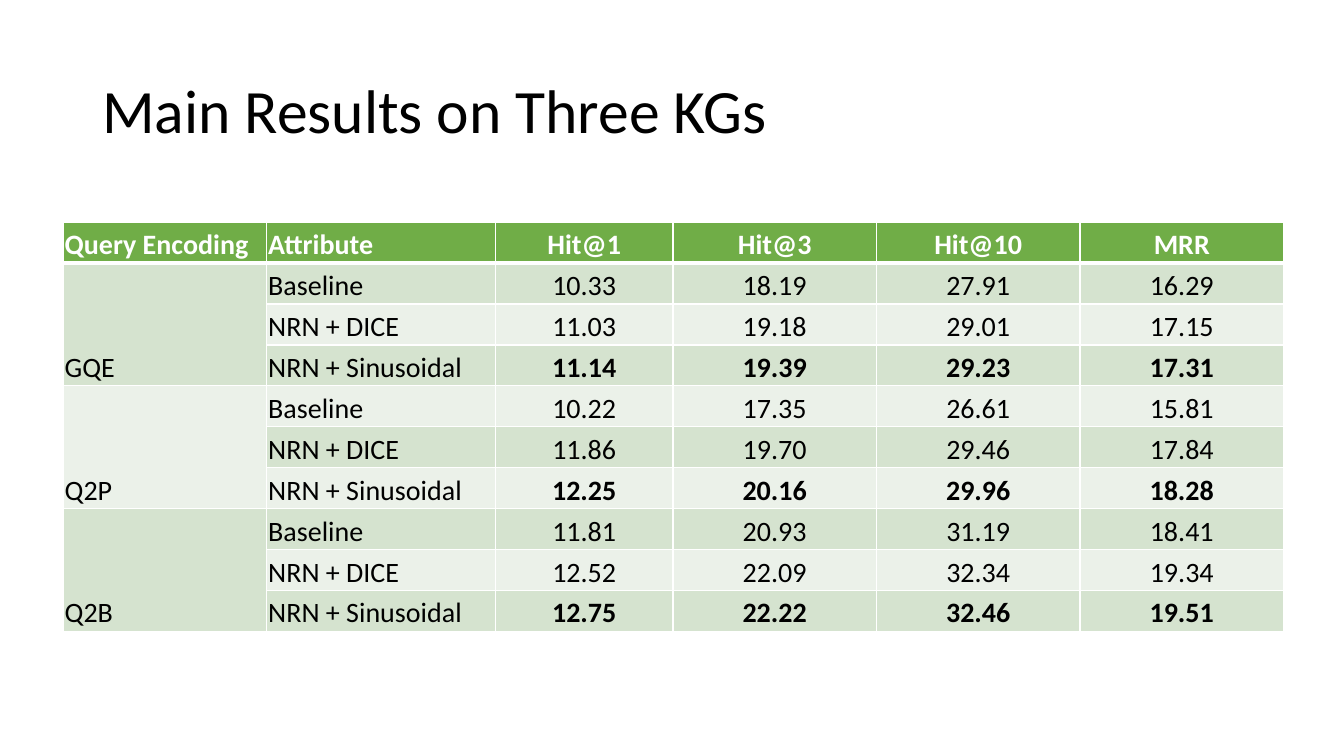
from dataclasses import dataclass

from lxml.etree import SubElement
from pptx import Presentation
from pptx.dml.color import RGBColor as Rgb
from pptx.enum.text import MSO_ANCHOR as Anchor, PP_ALIGN as Align
from pptx.oxml.ns import qn
from pptx.util import Pt

COLORS = {
    "header": "70AD47",
    "dark_band": "D5E3CF",
    "light_band": "EBF1E9",
    "white": "FFFFFF",
    "black": "000000",
}
HEADINGS = ("Query Encoding", "Attribute", "Hit@1", "Hit@3", "Hit@10", "MRR")
COLUMN_WIDTHS = (145.4, 163.6, 126.7, 145.4, 145.4, 145.4)
ROW_HEIGHT = 29.25
ATTRIBUTES = ("Baseline", "NRN + DICE", "NRN + Sinusoidal")
BEST = "NRN + Sinusoidal"
THIN, THICK = 1, 3

CELL_FORMAT = {
    "vertical_anchor": Anchor.BOTTOM,
    "margin_left": Pt(1.2),
    "margin_right": Pt(1.2),
    "margin_top": Pt(0.6),
    "margin_bottom": Pt(0.6),
}
TITLE_FORMAT = {"word_wrap": True, "vertical_anchor": Anchor.MIDDLE}


@dataclass
class Encoding:
    name: str
    scores: tuple[str, str, str]  # one line of metrics per attribute


@dataclass
class Entry:
    text: str
    fill: str
    color: str = "black"
    bold: bool = False
    centered: bool = False
    top: float = THIN
    bottom: float = THIN


ENCODINGS = (
    Encoding("GQE", ("10.33 18.19 27.91 16.29",
                     "11.03 19.18 29.01 17.15",
                     "11.14 19.39 29.23 17.31")),
    Encoding("Q2P", ("10.22 17.35 26.61 15.81",
                     "11.86 19.70 29.46 17.84",
                     "12.25 20.16 29.96 18.28")),
    Encoding("Q2B", ("11.81 20.93 31.19 18.41",
                     "12.52 22.09 32.34 19.34",
                     "12.75 22.22 32.46 19.51")),
)


def apply_format(target, values: dict) -> None:
    for key, value in values.items():
        setattr(target, key, value)


def write_text(paragraph, text: str, size: float, color: str, bold: bool = False) -> None:
    run = paragraph.add_run()
    run.text = text
    apply_format(run.font, {"name": "Calibri", "size": Pt(size), "bold": bold})
    run.font.color.rgb = Rgb.from_string(COLORS[color])


def draw_borders(cell, top: float, bottom: float) -> None:
    properties = cell._tc.get_or_add_tcPr()
    sides = {"lnL": THIN, "lnR": THIN, "lnT": top, "lnB": bottom}
    for position, (side, width) in enumerate(sides.items()):
        line = SubElement(properties, qn(f"a:{side}"), w=str(Pt(width)))
        fill = SubElement(line, qn("a:solidFill"))
        SubElement(fill, qn("a:srgbClr"), val=COLORS["white"])
        properties.insert(position, line)


def draw_entry(cell, entry: Entry) -> None:
    apply_format(cell, CELL_FORMAT)
    cell.fill.solid()
    cell.fill.fore_color.rgb = Rgb.from_string(COLORS[entry.fill])
    draw_borders(cell, entry.top, entry.bottom)
    paragraph = cell.text_frame.paragraphs[0]
    paragraph.alignment = Align.CENTER if entry.centered else Align.LEFT
    if entry.text:
        write_text(paragraph, entry.text, 20, entry.color, entry.bold)


def result_rows() -> list[list[Entry]]:
    rows = [[Entry(heading, "header", "white", True, column > 1, bottom=THICK)
             for column, heading in enumerate(HEADINGS)]]
    for encoding in ENCODINGS:
        for attribute, scores in zip(ATTRIBUTES, encoding.scores):
            band = "dark_band" if len(rows) % 2 else "light_band"
            top = THICK if len(rows) == 1 else THIN
            name = encoding.name if attribute == ATTRIBUTES[0] else ""
            rows.append(
                [Entry(name, band, top=top), Entry(attribute, band, top=top)]
                + [Entry(score, band, bold=attribute == BEST, centered=True, top=top)
                   for score in scores.split()])
    return rows


def draw_title(slide, text: str) -> None:
    frame = slide.shapes.add_textbox(Pt(66), Pt(28.75), Pt(828), Pt(104.4)).text_frame
    apply_format(frame, TITLE_FORMAT)
    frame.paragraphs[0].line_spacing = 0.9
    write_text(frame.paragraphs[0], text, 44, "black")


def draw_results(slide) -> None:
    rows = result_rows()
    results = slide.shapes.add_table(
        len(rows), len(HEADINGS), Pt(45), Pt(158.7),
        Pt(sum(COLUMN_WIDTHS)), Pt(ROW_HEIGHT * len(rows))).table
    for column, width in zip(results.columns, COLUMN_WIDTHS):
        column.width = Pt(width)
    for row_index, row in enumerate(rows):
        results.rows[row_index].height = Pt(ROW_HEIGHT)
        for column_index, entry in enumerate(row):
            draw_entry(results.cell(row_index, column_index), entry)
    # Each encoding spans its attributes
    span = len(ATTRIBUTES)
    for first in range(1, len(rows), span):
        results.cell(first, 0).merge(results.cell(first + span - 1, 0))


def main() -> None:
    deck = Presentation()
    apply_format(deck, {"slide_width": Pt(960), "slide_height": Pt(540)})
    slide = deck.slides.add_slide(deck.slide_layouts[6])
    draw_title(slide, "Main Results on Three KGs")
    draw_results(slide)
    deck.save("out.pptx")


if __name__ == "__main__":
    main()
